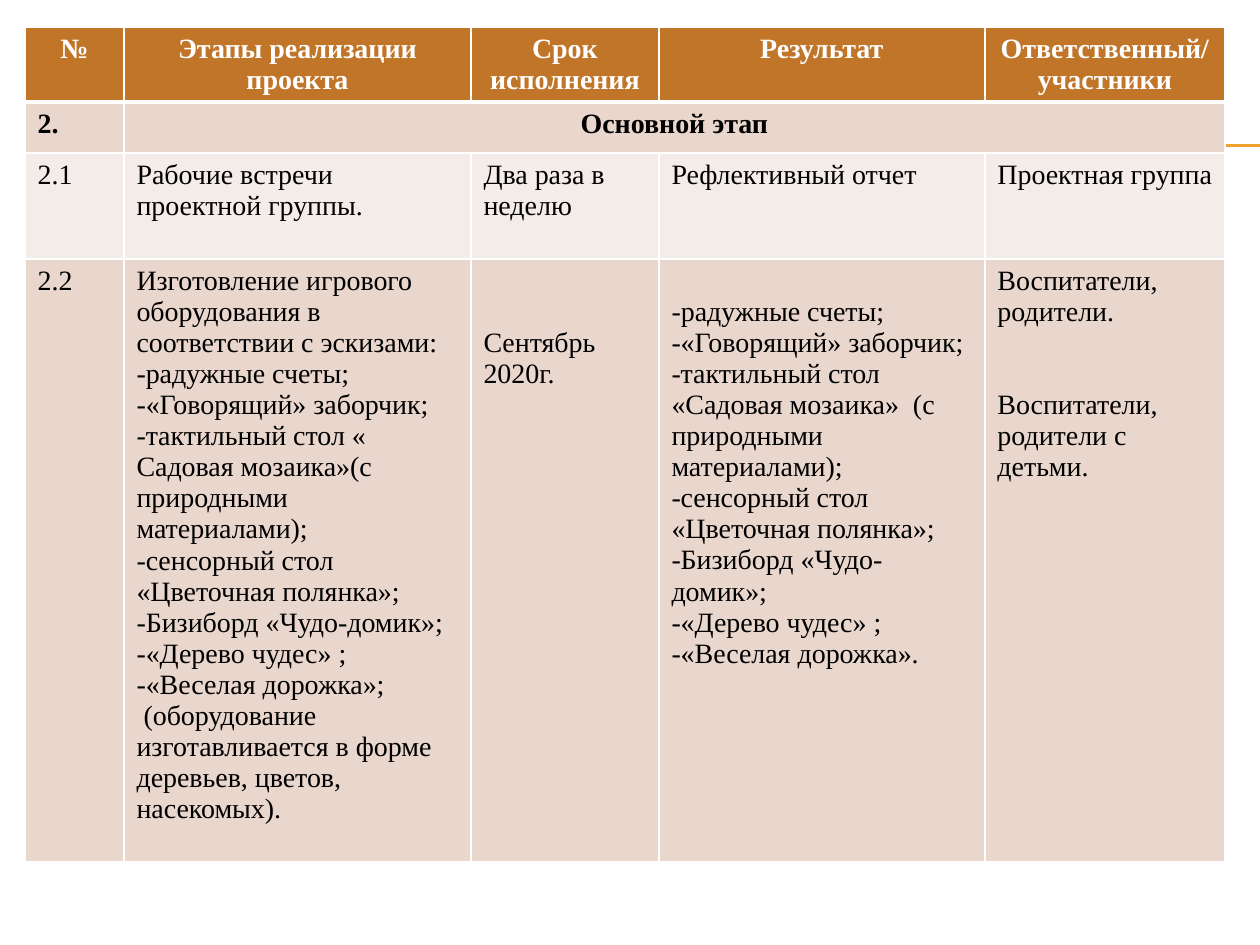
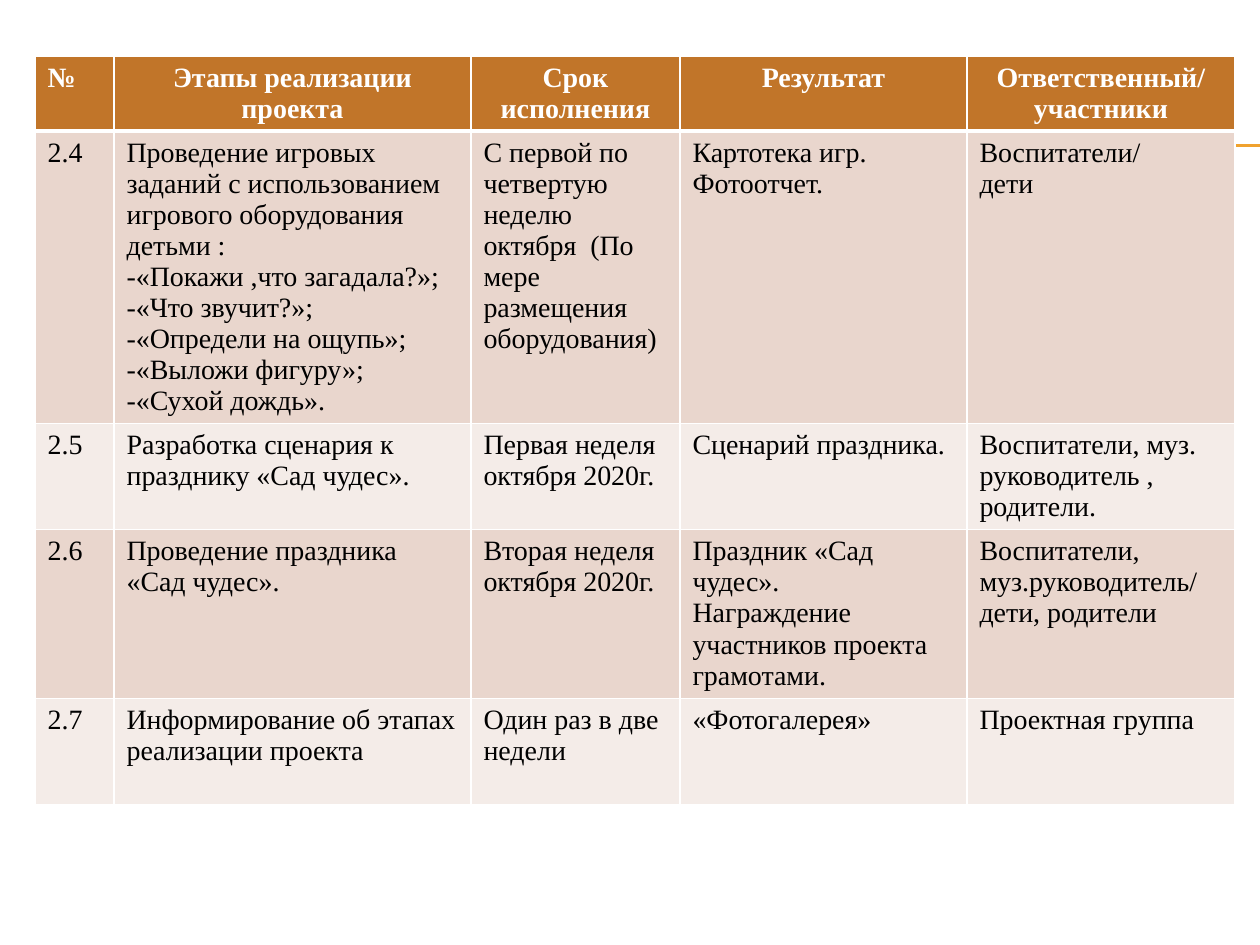
from dataclasses import dataclass

from lxml.etree import SubElement
from pptx import Presentation
from pptx.dml.color import RGBColor
from pptx.enum.shapes import MSO_CONNECTOR
from pptx.enum.text import PP_ALIGN
from pptx.oxml.ns import qn
from pptx.util import Pt

EMU_PER_PX = 914400 / 126
PAGE_WIDTH, PAGE_HEIGHT = 1260, 945


@dataclass(frozen=True)
class Theme:
    font: str = "Times New Roman"
    text_size: int = 16
    line_height: float = 17.75
    header_fill: str = "C17529"
    band_fills: tuple = ("E9D6CD", "F4ECE8")
    header_text: str = "FFFFFF"
    body_text: str = "000000"
    border: str = "FFFFFF"
    border_width: int = 1
    header_rule_width: int = 3
    rule: str = "F0A22E"
    rule_width: float = 0.75


THEME = Theme()

# Content. A cell is one paragraph or a list of them; "*" marks a dash bullet,
# and a pair (lines, text) leaves that many lines free above the text.
HEADER = ["№", "Этапы реализации проекта", "Срок исполнения", "Результат",
          "Ответственный/ участники"]

TABLES = [
    {
        "left": 25, "top": 27,
        "columns": [99, 347, 188, 326, 240],
        "heights": [73, 51, 106, 603],
        "centred_number": True,
        "section_row": 1,
        "rows": [
            HEADER,
            ["2.", "Основной этап"],
            ["2.1", "Рабочие встречи проектной группы.", "Два раза в неделю",
             "Рефлективный отчет", "Проектная группа"],
            ["2.2",
             ["Изготовление игрового оборудования в соответствии с эскизами:",
              "*радужные счеты;",
              "*«Говорящий» заборчик;",
              "*тактильный стол « Садовая мозаика»(с природными материалами);",
              "*сенсорный стол «Цветочная полянка»;",
              "*Бизиборд «Чудо-домик»;",
              "*«Дерево чудес» ;",
              "*«Веселая дорожка»;",
              " (оборудование изготавливается в форме деревьев, цветов, насекомых)."],
             [(2, "Сентябрь 2020г.")],
             [(1, "-радужные счеты;"),
              "*«Говорящий» заборчик;",
              "*тактильный стол «Садовая мозаика»  (с природными материалами);",
              "*сенсорный стол «Цветочная полянка»;",
              "*Бизиборд «Чудо-домик»;",
              "*«Дерево чудес» ;",
              "*«Веселая дорожка»."],
             ["Воспитатели, родители.", (2, "Воспитатели, родители с детьми.")]],
        ],
    },
    {
        "left": 35, "top": 56,
        "columns": [79, 357, 209, 287, 268],
        "heights": [74, 292, 106, 169, 106],
        "centred_number": False,
        "section_row": None,
        "rows": [
            HEADER[:-1] + ["Ответственный/участники"],
            ["2.4",
             ["Проведение игровых заданий с использованием игрового оборудования детьми :",
              "*«Покажи ,что загадала?»;",
              "*«Что звучит?»;",
              "*«Определи на ощупь»;",
              "*«Выложи фигуру»;",
              "*«Сухой дождь»."],
             "С первой по четвертую неделю октября  (По мере размещения оборудования)",
             "Картотека игр. Фотоотчет.",
             ["Воспитатели/", "дети"]],
            ["2.5", "Разработка сценария к празднику «Сад чудес».",
             "Первая неделя октября 2020г.", "Сценарий праздника.",
             "Воспитатели, муз. руководитель , родители."],
            ["2.6", "Проведение праздника «Сад чудес».",
             "Вторая неделя октября 2020г.",
             ["Праздник «Сад чудес».", "Награждение участников проекта грамотами."],
             "Воспитатели, муз.руководитель/ дети, родители"],
            ["2.7", "Информирование об этапах реализации проекта",
             "Один раз в две недели", "«Фотогалерея»", "Проектная группа"],
        ],
    },
]


def px(length):
    return round(length * EMU_PER_PX)


def color(value):
    return RGBColor.from_string(value)


def add_rules(page):
    """Double thin line that runs to the right edge behind the table."""
    for y in (145, 146):
        line = page.shapes.add_connector(
            MSO_CONNECTOR.STRAIGHT, px(71), px(y), px(PAGE_WIDTH), px(y))
        line.line.color.rgb = color(THEME.rule)
        line.line.width = Pt(THEME.rule_width)
        SubElement(line._element.spPr, qn("a:effectLst"))


def set_borders(cell, row):
    properties = cell._tc.get_or_add_tcPr()
    heavy_side = {0: "lnB", 1: "lnT"}.get(row)
    for position, side in enumerate(("lnL", "lnR", "lnT", "lnB")):
        width = THEME.header_rule_width if side == heavy_side else THEME.border_width
        border = SubElement(properties, qn(f"a:{side}"), w=str(Pt(width)))
        fill = SubElement(border, qn("a:solidFill"))
        SubElement(fill, qn("a:srgbClr"), val=THEME.border)
        properties.insert(position, border)


def add_dash(para):
    properties = para._p.get_or_add_pPr()
    properties.set("marL", "0")
    properties.set("indent", "0")
    SubElement(properties, qn("a:buFont"), typeface=THEME.font)
    SubElement(properties, qn("a:buChar"), char="-")


def write_cell(cell, content, ink, bold, centred):
    paragraphs = [content] if isinstance(content, str) else content
    frame = cell.text_frame
    for index, item in enumerate(paragraphs):
        free_lines, text = (0, item) if isinstance(item, str) else item
        para = frame.add_paragraph() if index else frame.paragraphs[0]
        gap = Pt(free_lines * THEME.line_height)
        if index:
            para.space_before = gap
        else:
            cell.margin_top += gap
        para.alignment = PP_ALIGN.CENTER if centred else PP_ALIGN.LEFT
        para.font.name = THEME.font
        para.font.size = Pt(THEME.text_size)
        para.font.bold = bold
        para.font.color.rgb = color(ink)
        if text.startswith("*"):
            add_dash(para)
        para.add_run().text = text.removeprefix("*")


def add_stage_table(page, plan):
    columns, heights = plan["columns"], plan["heights"]
    table = page.shapes.add_table(
        len(heights), len(columns), px(plan["left"]), px(plan["top"]),
        px(sum(columns)), px(sum(heights))).table
    for column, width in zip(table.columns, columns):
        column.width = px(width)
    for row, height in zip(table.rows, heights):
        row.height = px(height)

    # Fills and borders
    for r in range(len(heights)):
        for c in range(len(columns)):
            cell = table.cell(r, c)
            cell.fill.solid()
            cell.fill.fore_color.rgb = color(
                THEME.band_fills[(r - 1) % 2] if r else THEME.header_fill)
            set_borders(cell, r)

    # Section title spans every column after the number
    section = plan["section_row"]
    if section is not None:
        table.cell(section, 1).merge(table.cell(section, len(columns) - 1))

    # Text
    for r, contents in enumerate(plan["rows"]):
        is_title = r in (0, section)
        ink = THEME.body_text if r else THEME.header_text
        for c, content in enumerate(contents):
            centred = is_title and (c > 0 or (r == 0 and plan["centred_number"]))
            write_cell(table.cell(r, c), content, ink, is_title, centred)


def main():
    deck = Presentation()
    deck.slide_width, deck.slide_height = px(PAGE_WIDTH), px(PAGE_HEIGHT)
    for plan in TABLES:
        page = deck.slides.add_slide(deck.slide_layouts[6])
        add_rules(page)
        add_stage_table(page, plan)
    deck.save("out.pptx")


if __name__ == "__main__":
    main()
